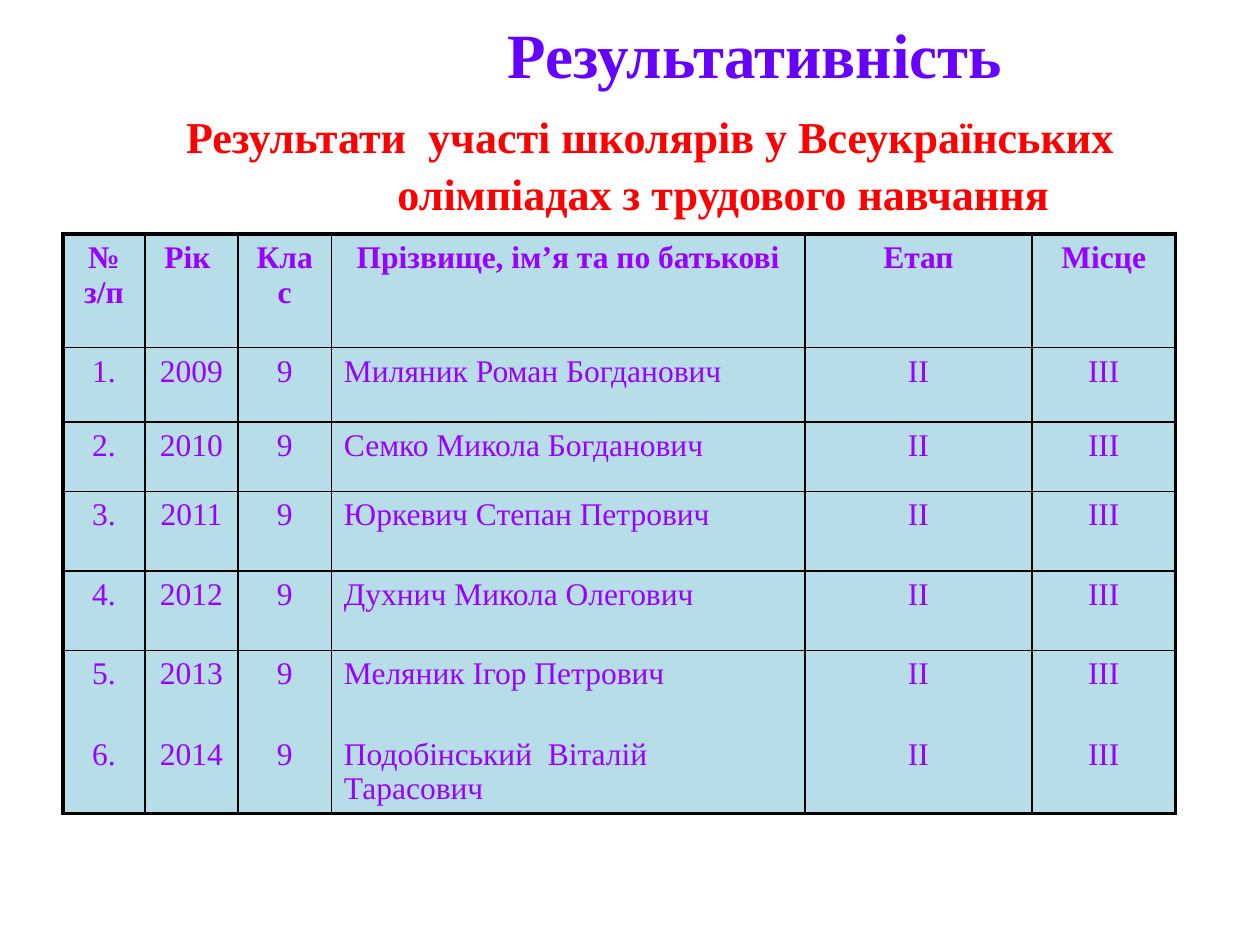
from dataclasses import dataclass

from lxml.etree import SubElement
from pptx import Presentation
from pptx.dml.color import RGBColor
from pptx.enum.text import MSO_ANCHOR, MSO_AUTO_SIZE, PP_ALIGN
from pptx.oxml.ns import qn
from pptx.slide import Slide
from pptx.table import _Cell
from pptx.text.text import _Paragraph
from pptx.util import Cm, Pt

FONT = "Times New Roman"
INDIGO = RGBColor(0x66, 0x00, 0xFF)
RED = RGBColor(0xFF, 0x00, 0x00)
VIOLET = RGBColor(0x99, 0x00, 0xFF)
PALE_BLUE = RGBColor(0xB7, 0xDE, 0xE8)
BLACK = RGBColor(0x00, 0x00, 0x00)
OUTER_WIDTH, INNER_WIDTH = Pt(2.25), Pt(1)
COLUMN_WIDTHS = (1.65, 1.88, 1.88, 9.55, 4.57, 2.9)
ROW_HEIGHTS = (2.29, 1.5, 1.4, 1.6, 1.6, 3.29)
NAME_COLUMN = 3
HEADERS = ("№ з/п", "Рік ", "Клас", "Прізвище, ім’я та по батькові", "Етап", "Місце")


@dataclass(frozen=True)
class TitleLine:
    """One centred line of the heading, shifted right by its indent."""

    text: str
    size: float
    color: RGBColor
    indent: float
    line_height: float
    space_before: float = 0


@dataclass(frozen=True)
class Winner:
    """One pupil's result in the olympiad."""

    number: int
    year: int
    name: str
    grade: str = "9"
    stage: str = "ІІ"
    place: str = "ІІІ"

    def values(self) -> tuple[str, ...]:
        """Return the values in column order."""
        return (f"{self.number}.", str(self.year), self.grade, self.name, self.stage, self.place)


TITLE_LINES = (
    TitleLine("Результативність", 36, INDIGO, 5.03, 41.4),
    TitleLine("Результати  участі школярів у Всеукраїнських", 25.2, RED, 0.81, 32.6, 8),
    TitleLine("олімпіадах з трудового навчання", 25.2, RED, 3.76, 32.6),
)
WINNERS = tuple(
    Winner(number, 2008 + number, name)
    for number, name in enumerate(
        (
            "Миляник Роман Богданович",
            "Семко Микола Богданович",
            "Юркевич Степан Петрович",
            "Духнич Микола Олегович",
            "Меляник Ігор Петрович",
            "Подобінський  Віталій  Тарасович",
        ),
        start=1,
    )
)


def format_runs(paragraph: _Paragraph, size: float, color: RGBColor, bold: bool) -> None:
    """Apply one text style to all runs of a paragraph."""
    for run in paragraph.runs:
        run.font.name = FONT
        run.font.size = Pt(size)
        run.font.bold = bold
        run.font.color.rgb = color


def add_title(slide: Slide) -> None:
    """Fill and format the title placeholder."""
    title = slide.shapes.title
    title.left, title.top, title.width, title.height = Cm(1.27), Cm(0.8), Cm(22.86), Cm(3.2)
    text_frame = title.text_frame
    text_frame.word_wrap = True
    text_frame.auto_size = MSO_AUTO_SIZE.NONE
    text_frame.vertical_anchor = MSO_ANCHOR.MIDDLE
    text_frame.text = "\n".join(line.text for line in TITLE_LINES)
    for paragraph, line in zip(text_frame.paragraphs, TITLE_LINES):
        paragraph.alignment = PP_ALIGN.CENTER
        paragraph.line_spacing = Pt(line.line_height)
        paragraph.space_before = Pt(line.space_before)
        paragraph._p.get_or_add_pPr().set("marL", str(Cm(line.indent)))
        format_runs(paragraph, line.size, line.color, True)


def set_borders(cell: _Cell, outer_sides: dict[str, bool]) -> None:
    """Draw the four cell borders, thicker on the outer sides."""
    properties = cell._tc.get_or_add_tcPr()
    for side, is_outer in outer_sides.items():
        width = OUTER_WIDTH if is_outer else INNER_WIDTH
        border = SubElement(properties, qn(f"a:ln{side}"), w=str(width))
        fill = SubElement(border, qn("a:solidFill"))
        SubElement(fill, qn("a:srgbClr"), val=str(BLACK))


def fill_cell(cell: _Cell, text: str, alignment: PP_ALIGN, bold: bool) -> None:
    """Write and format the text and fill of a cell."""
    cell.fill.solid()
    cell.fill.fore_color.rgb = PALE_BLUE
    cell.vertical_anchor = MSO_ANCHOR.TOP
    cell.text_frame.text = text
    for index, paragraph in enumerate(cell.text_frame.paragraphs):
        paragraph.alignment = alignment
        paragraph.space_before = Pt(26 if index else 0)
        format_runs(paragraph, 18, VIOLET, bold)


def add_results(slide: Slide) -> None:
    """Add the results table, with the last two winners sharing a row."""
    shared_row = tuple("\n".join(pair) for pair in zip(*(winner.values() for winner in WINNERS[-2:])))
    rows = (HEADERS, *(winner.values() for winner in WINNERS[:-2]), shared_row)
    last_row, last_column = len(rows) - 1, len(HEADERS) - 1
    table = slide.shapes.add_table(
        len(rows), len(HEADERS), Cm(1.27), Cm(4.72), Cm(sum(COLUMN_WIDTHS)), Cm(sum(ROW_HEIGHTS))
    ).table
    table.first_row = False
    table.horz_banding = False
    for column, width in zip(table.columns, COLUMN_WIDTHS):
        column.width = Cm(width)
    for row, height in zip(table.rows, ROW_HEIGHTS):
        row.height = Cm(height)
    for row_index, values in enumerate(rows):
        for column_index, text in enumerate(values):
            cell = table.cell(row_index, column_index)
            is_header = row_index == 0
            is_name = column_index == NAME_COLUMN and not is_header
            outer_sides = {
                "L": column_index == 0,
                "R": column_index == last_column,
                "T": is_header,
                "B": row_index == last_row,
            }
            set_borders(cell, outer_sides)
            fill_cell(cell, text, PP_ALIGN.LEFT if is_name else PP_ALIGN.CENTER, is_header)


def main() -> None:
    """Build and save the presentation."""
    presentation = Presentation()
    presentation.slide_width, presentation.slide_height = Cm(25.4), Cm(19.05)
    slide = presentation.slides.add_slide(presentation.slide_layouts[5])
    add_title(slide)
    add_results(slide)
    presentation.save("out.pptx")


if __name__ == "__main__":
    main()
